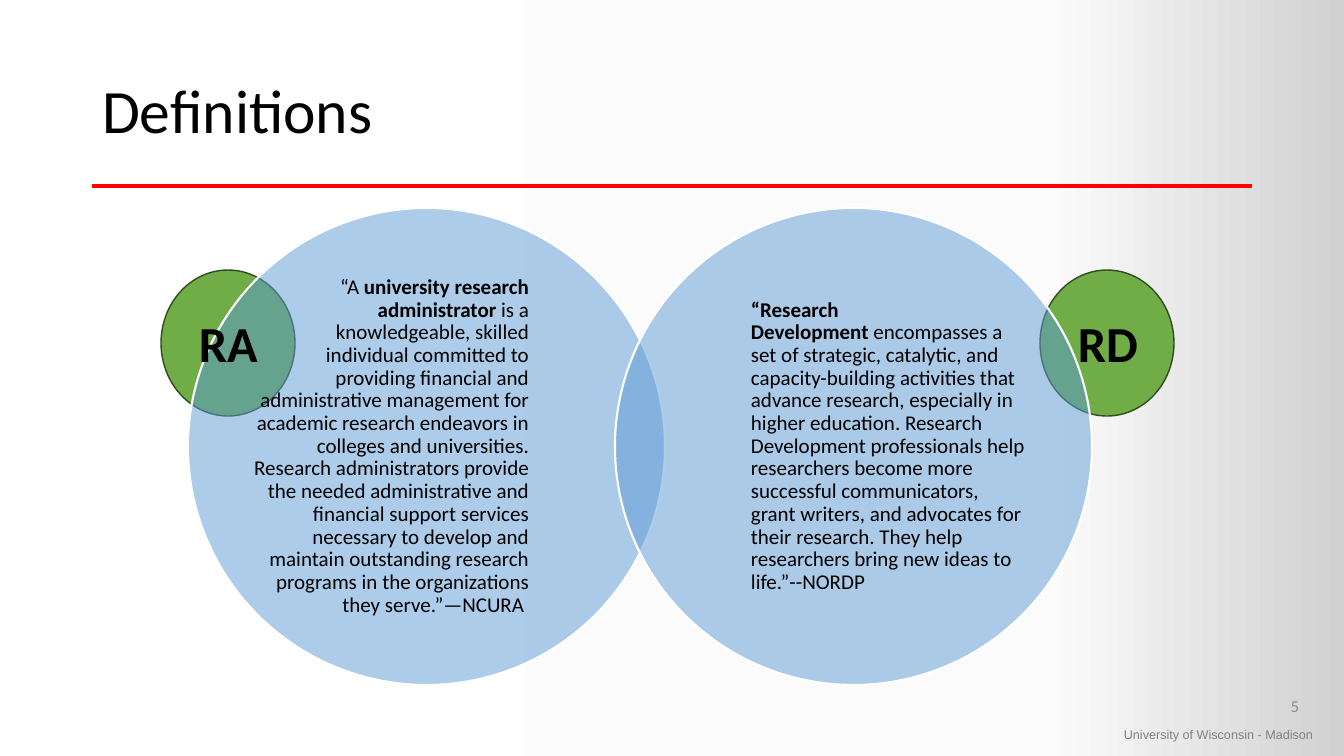
from copy import deepcopy
from dataclasses import dataclass

from lxml import etree
from pptx import Presentation
from pptx.dml.color import RGBColor
from pptx.enum import shapes, text
from pptx.oxml import ns
from pptx.util import Pt

NBSP = chr(160)  # keeps "Development encompasses" on one line
TITLE = "Definitions"
FOOTER = "University of Wisconsin - Madison"
PAGE = "5"
BADGES = [("RD", 1040), ("RA", 161)]  # label, left edge
# circle left, text left, alignment, (text, bold) runs
DEFINITIONS = [
    (188, 254, "RIGHT", [
        ("“A ", False),
        ("university research administrator ", True),
        ("is a knowledgeable, skilled individual committed to providing "
         "financial and administrative management for academic research "
         "endeavors in colleges and universities. Research administrators "
         "provide the needed administrative and financial support services "
         "necessary to develop and maintain outstanding research programs in "
         "the organizations they serve.”—NCURA ", False)]),
    (615, 751, "LEFT", [
        ("“Research Development", True),
        (NBSP + "encompasses a set of strategic, catalytic, and "
         "capacity-building activities that advance research, especially in "
         "higher education. Research Development professionals help "
         "researchers become more successful communicators, grant writers, "
         "and advocates for their research. They help researchers bring new "
         "ideas to life.”--NORDP", False)]),
]


@dataclass(frozen=True)
class Theme:
    font: str = "Calibri"
    footer_font: str = "Arial"
    ink: str = "000000"
    rule: str = "FF0000"
    circle: str = "5B9BD5"
    outline: str = "FFFFFF"
    badge: str = "70AD47"
    badge_edge: str = "314C1F"
    page: str = "8C8C8C"
    footer: str = "808080"
    background: tuple = ((0, "FFFFFF"), (0.78, "FBFBFB"), (1, "D1D1D1"))
    title_size: int = 44
    badge_size: int = 36
    body_size: int = 15
    page_size: int = 12
    footer_size: int = 9


THEME = Theme()
EMU_PER_PX = 914400 / 100.8


def px(*lengths):
    return [round(n * EMU_PER_PX) for n in lengths]


def rgb(code):
    return RGBColor.from_string(code)


def write(sp, runs, size, color=THEME.ink, font=THEME.font, bold=False,
          align="LEFT", anchor="TOP", spacing=None, inset=None, wrap=True):
    """Fill a shape with one paragraph, from a string or (text, bold) runs."""
    tf = sp.text_frame
    tf.word_wrap = wrap
    tf.vertical_anchor = getattr(text.MSO_ANCHOR, anchor)
    if inset is not None:
        tf.margin_left = tf.margin_right = inset
        tf.margin_top = tf.margin_bottom = inset
    p = tf.paragraphs[0]
    p.alignment = getattr(text.PP_ALIGN, align)
    if spacing:
        p.line_spacing = spacing
    for words, strong in [(runs, bold)] if isinstance(runs, str) else runs:
        r = p.add_run()
        r.text = words
        r.font.name, r.font.size, r.font.bold = font, Pt(size), strong
        r.font.color.rgb = rgb(color)


def add_text(s, box, runs, size, **fmt):
    write(s.shapes.add_textbox(*px(*box)), runs, size, **fmt)


def add_ellipse(s, box, fill, edge, width, alpha=None):
    sp = s.shapes.add_shape(shapes.MSO_SHAPE.OVAL, *px(*box))
    sp.shadow.inherit = False
    sp.fill.solid()
    sp.fill.fore_color.rgb = rgb(fill)
    sp.line.color.rgb = rgb(edge)
    sp.line.width = Pt(width)
    if alpha:
        color = sp.fill._xPr.find(ns.qn("a:solidFill"))[0]
        etree.SubElement(color, ns.qn("a:alpha"), val=str(alpha * 1000))


def add_rule(s, x1, x2, y):
    line = s.shapes.add_connector(shapes.MSO_CONNECTOR.STRAIGHT,
                                  *px(x1, y, x2, y))
    line.line.color.rgb = rgb(THEME.rule)
    line.line.width = Pt(3)
    etree.SubElement(line._element.spPr, ns.qn("a:effectLst"))


def paint_background(s):
    fill = s.background.fill
    fill.gradient()
    fill.gradient_angle = 0
    stops = fill._xPr.find(ns.qn("a:gradFill")).find(ns.qn("a:gsLst"))
    stops.append(deepcopy(stops[-1]))
    for stop, (position, color) in zip(fill.gradient_stops, THEME.background):
        stop.position = position
        stop.color.rgb = rgb(color)


def main():
    prs = Presentation()
    prs.slide_width, prs.slide_height = px(1344, 756)
    s = prs.slides.add_slide(prs.slide_layouts[5])
    paint_background(s)

    title = s.shapes.title
    title.left, title.top, title.width, title.height = px(92, 41, 1160, 146)
    write(title, TITLE, THEME.title_size, anchor="MIDDLE", spacing=0.9)
    add_text(s, (1114, 722, 220, 25), FOOTER, THEME.footer_size,
             color=THEME.footer, font=THEME.footer_font, wrap=False)
    add_rule(s, 92, 1252, 186)

    for _, left in BADGES:
        add_ellipse(s, (left, 270, 134, 146), THEME.badge, THEME.badge_edge, 1)
    for left, text_left, align, runs in DEFINITIONS:
        add_ellipse(s, (left, 208, 477, 477), THEME.circle, THEME.outline,
                    1.5, alpha=50)
        add_text(s, (text_left, 264, 275, 365), runs, THEME.body_size,
                 align=align, anchor="MIDDLE", spacing=0.9, inset=0)
    add_text(s, (1007, 686, 302, 40), PAGE, THEME.page_size,
             color=THEME.page, align="RIGHT", anchor="MIDDLE")
    for label, left in BADGES:
        add_text(s, (left + 28, 307, 90, 72), label, THEME.badge_size,
                 bold=True, wrap=False)

    prs.save("out.pptx")


if __name__ == "__main__":
    main()
